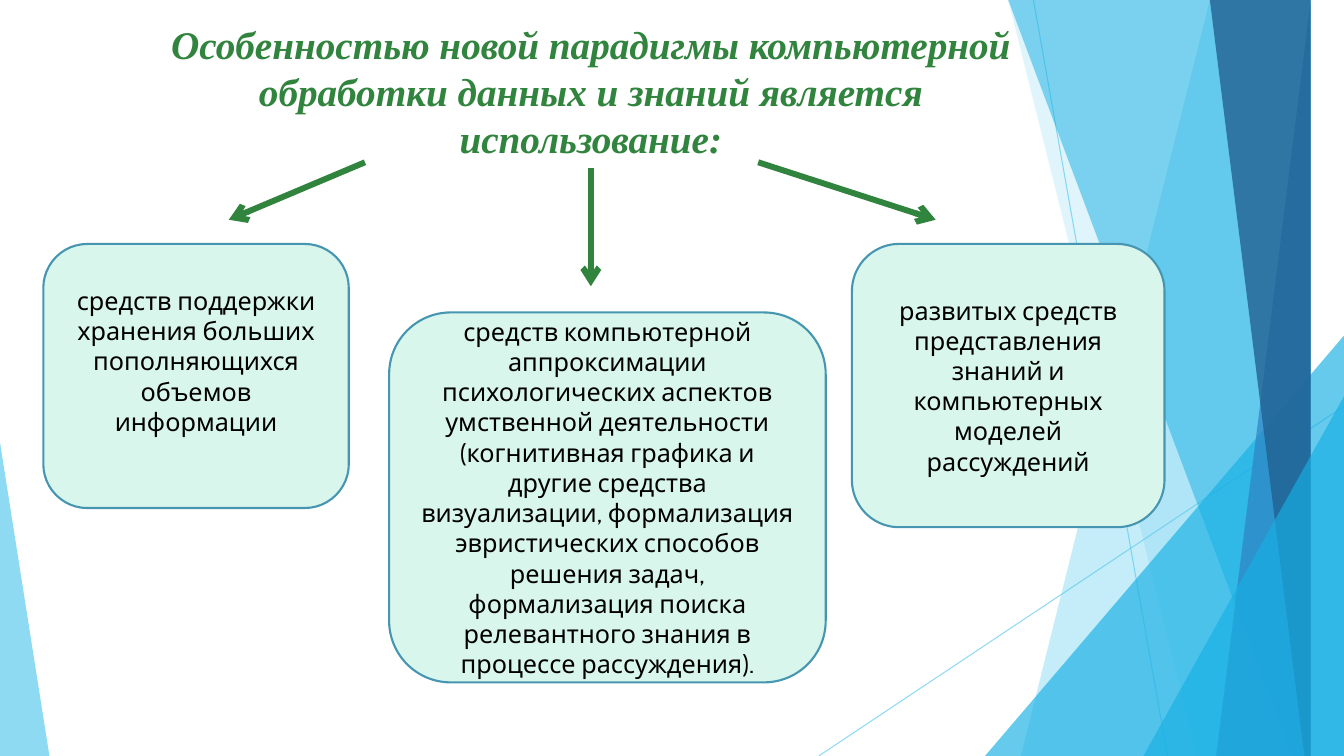
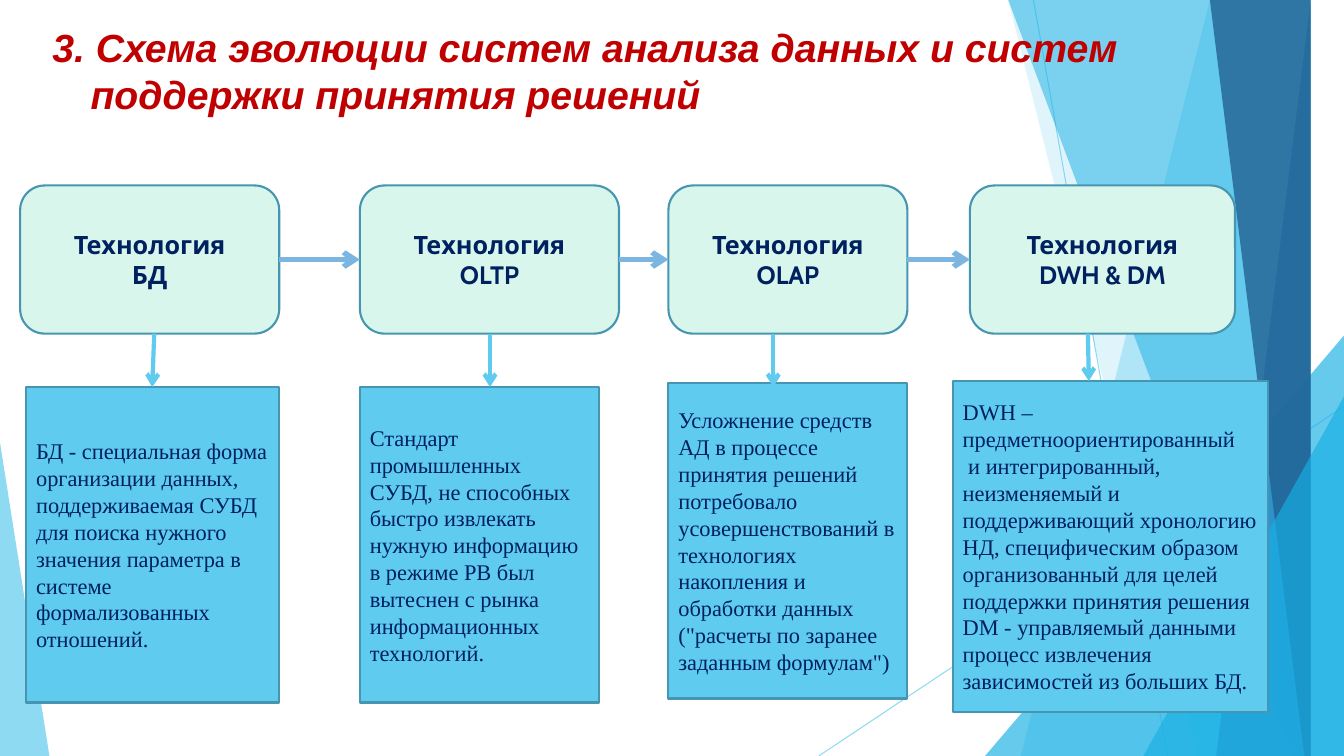
import pptx
import pptx.util
import pptx.dml.color
import pptx.enum.shapes
import pptx.enum.text
import pptx.oxml
import pptx.oxml.ns
from lxml import etree

Inches, Pt, qn = pptx.util.Inches, pptx.util.Pt, pptx.oxml.ns.qn
SHAPE = pptx.enum.shapes.MSO_SHAPE
ALIGN = pptx.enum.text.PP_ALIGN
ANCHOR = pptx.enum.text.MSO_ANCHOR

WIDTH, HEIGHT = 13.33, 7.5
COLORS = {
    "sky": "5FCBEF", "cyan": "17B0E4", "blue": "2E83C3", "deep": "226292",
    "mint": "D9F6EC", "outline": "4696B1", "flow": "7CB5E0",
    "green": "31843D", "red": "C00000", "navy": "002060", "black": "000000",
}
SERIF, SANS, BODY = "Times New Roman", "Arial", "Cabin"

# Backdrop: lines (x1, y1, x2, y2); bands (top x, bottom x) reaching the right
# edge; triangles (left, top, width, height, apex position).
BACKDROP = [
    ("line", (10.25, 0, 11.58, HEIGHT), "sky", 70),
    ("line", (WIDTH, 4.03, 8.12, HEIGHT), "sky", 70),
    ("band", (12.28, 10.04), "sky", 36),
    ("band", (10.5, 11.82), "sky", 20),
    ("triangle", (9.77, 3.33, 3.56, 4.17, 1), "cyan", 66),
    ("band", (10.21, 12.91), "cyan", 50),
    ("band", (13.03, 11.92), "blue", 70),
    ("band", (11.96, 13.18), "deep", 80),
    ("triangle", (11.34, 3.93, 1.99, 3.57, 1), "cyan", 66),
    ("triangle", (0, 4.39, 0.49, 3.11, 0), "sky", 70),
]

FEATURES_TITLE = ("Особенностью новой парадигмы компьютерной обработки данных "
                  "и знаний является использование:")
# (box, bottom inset, text)
FEATURES = [
    ((0.43, 2.42, 3.03, 2.62), 0.35,
     "средств поддержки хранения больших пополняющихся объемов информации"),
    ((8.45, 2.42, 3.1, 2.81), 0.05,
     "развитых средств представления знаний и компьютерных моделей рассуждений"),
    ((3.86, 3.1, 4.33, 3.67), 0.05,
     "средств компьютерной аппроксимации психологических аспектов умственной "
     "деятельности (когнитивная графика и другие средства визуализации, "
     "формализация эвристических способов решения задач, формализация поиска "
     "релевантного знания в процессе рассуждения)."),
]
FEATURE_ARROWS = [(3.62, 1.61, 2.27, 2.18), (5.86, 1.67, 5.86, 2.84),
                  (7.52, 1.61, 9.28, 2.18)]

EVOLUTION_TITLE = ("3. Схема эволюции систем анализа данных и систем "
                   "поддержки принятия решений")
STAGE_TOP, STAGE_HEIGHT = 1.84, 1.47
# Stage (left, width), card box, arrow (start x, end x, end y), card paragraphs
STAGES = [
    ("БД", (0.2, 2.57), (0.26, 3.84, 2.51, 3.13), (1.53, 1.51, 3.84),
     ["БД - специальная форма организации данных, поддерживаемая СУБД для "
      "поиска нужного значения параметра в системе формализованных отношений."]),
    ("OLTP", (3.57, 2.57), (3.57, 3.84, 2.37, 3.13), (4.86, 4.86, 3.84),
     ["Стандарт промышленных СУБД, не способных быстро извлекать нужную "
      "информацию в режиме РВ был вытеснен с рынка информационных технологий."]),
    ("OLAP", (6.63, 2.37), (6.63, 3.8, 2.37, 3.13), (7.67, 7.67, 3.84),
     ["Усложнение средств АД в процессе принятия решений потребовало "
      "усовершенствований в технологиях накопления и обработки данных "
      "(\"расчеты по заранее заданным формулам\")"]),
    ("DWH & DM", (9.62, 2.63), (9.45, 3.78, 3.13, 3.28), (10.79, 10.8, 3.78),
     ["DWH – предметноориентированный",
      " и интегрированный, неизменяемый и поддерживающий хронологию НД, "
      "специфическим образом организованный для целей поддержки принятия "
      "решения DM - управляемый данными процесс извлечения зависимостей из "
      "больших БД."]),
]


def rgb(name):
    return pptx.dml.color.RGBColor.from_string(COLORS[name])


def set_alpha(sp, percent):
    for clr in list(sp.element.iter(qn("a:srgbClr"))):
        etree.SubElement(clr, qn("a:alpha")).set("val", str(percent * 1000))


def add_line(slide, ends, color, width, arrow=True):
    cxn = slide.shapes.add_connector(
        pptx.enum.shapes.MSO_CONNECTOR.STRAIGHT, *map(Inches, ends))
    cxn.line.color.rgb = rgb(color)
    cxn.line.width = Pt(width)
    spPr = cxn.element.spPr
    if arrow:
        etree.SubElement(spPr.find(qn("a:ln")), qn("a:tailEnd")).set("type", "arrow")
    etree.SubElement(spPr, qn("a:effectLst"))
    return cxn


def write(tf, paragraphs, font, size, color, align, bold=False, italic=False):
    tf.word_wrap = True
    for i, text in enumerate(paragraphs):
        p = tf.add_paragraph() if i else tf.paragraphs[0]
        p.alignment = align
        r = p.add_run()
        r.text = text
        r.font.name, r.font.size = font, Pt(size)
        r.font.bold, r.font.italic = bold, italic
        r.font.color.rgb = rgb(color)


def add_title(slide, box, text, font, color, align):
    tf = slide.shapes.add_textbox(*map(Inches, box)).text_frame
    write(tf, [text], font, 28, color, align, bold=True, italic=True)
    return tf.paragraphs[0]


def add_box(slide, kind, box, fill):
    sp = slide.shapes.add_shape(kind, *map(Inches, box))
    sp.shadow.inherit = False
    sp.fill.solid()
    sp.fill.fore_color.rgb = rgb(fill)
    sp.line.color.rgb = rgb("outline")
    sp.line.width = Pt(1.5)
    sp.text_frame.vertical_anchor = ANCHOR.MIDDLE
    return sp


def add_backdrop(slide, layout):
    """Draw the backdrop on an empty slide, then move it to the layout."""
    for kind, geometry, color, alpha in BACKDROP:
        if kind == "line":
            sp = add_line(slide, geometry, color, 0.75, arrow=False)
        else:
            if kind == "band":
                top, bottom = geometry
                outline = slide.shapes.build_freeform(top, 0, scale=float(Inches(1)))
                outline.add_line_segments(
                    [(WIDTH, 0), (WIDTH, HEIGHT), (bottom, HEIGHT)], close=True)
                sp = outline.convert_to_shape()
            else:
                *box, apex = geometry
                sp = slide.shapes.add_shape(SHAPE.ISOSCELES_TRIANGLE, *map(Inches, box))
                sp.adjustments[0] = apex
            sp.shadow.inherit = False
            sp.fill.solid()
            sp.fill.fore_color.rgb = rgb(color)
            sp.line.fill.background()
        set_alpha(sp, alpha)
    for number, sp in enumerate(list(slide.shapes), 100):
        sp.element.xpath(".//p:cNvPr")[0].set("id", str(number))
        layout.shapes.element.append(sp.element)


def build_features(slide):
    add_title(slide, (1.21, 0.15, 9.3, 1.52), FEATURES_TITLE, SERIF, "green", ALIGN.CENTER)
    for box, inset, text in FEATURES:
        tf = add_box(slide, SHAPE.ROUNDED_RECTANGLE, box, "mint").text_frame
        tf.margin_bottom = Inches(inset)
        write(tf, [text], BODY, 18, "black", ALIGN.CENTER)
    for ends in FEATURE_ARROWS:
        add_line(slide, ends, "green", 4.25)


def build_evolution(slide):
    p = add_title(slide, (0.42, 0.18, 12.08, 0.99), EVOLUTION_TITLE, SANS, "red", ALIGN.LEFT)
    pPr = p._p.get_or_add_pPr()
    pPr.set("marL", str(Inches(0.38)))
    pPr.set("indent", str(Inches(-0.38)))

    previous = None
    for name, (left, width), card, (x1, x2, y2), text in STAGES:
        stage = add_box(slide, SHAPE.ROUNDED_RECTANGLE,
                        (left, STAGE_TOP, width, STAGE_HEIGHT), "mint")
        write(stage.text_frame, ["Технология", name], BODY, 18, "navy",
              ALIGN.CENTER, bold=True)
        if previous:
            cxn = add_line(slide, (0, 0, 1, 1), "flow", 3.75)
            cxn.begin_connect(previous, 3)
            cxn.end_connect(stage, 1)
        previous = stage

        sp = add_box(slide, SHAPE.RECTANGLE, card, "sky")
        write(sp.text_frame, text, SERIF, 16, "navy", ALIGN.LEFT)
        add_line(slide, (x1, STAGE_TOP + STAGE_HEIGHT, x2, y2), "sky", 3)


def main():
    prs = pptx.Presentation()
    prs.slide_width, prs.slide_height = Inches(WIDTH), Inches(HEIGHT)
    blank = prs.slide_layouts[6]
    features, evolution = (prs.slides.add_slide(blank) for _ in range(2))
    add_backdrop(features, blank)
    build_features(features)
    build_evolution(evolution)
    prs.save("out.pptx")


if __name__ == "__main__":
    main()
